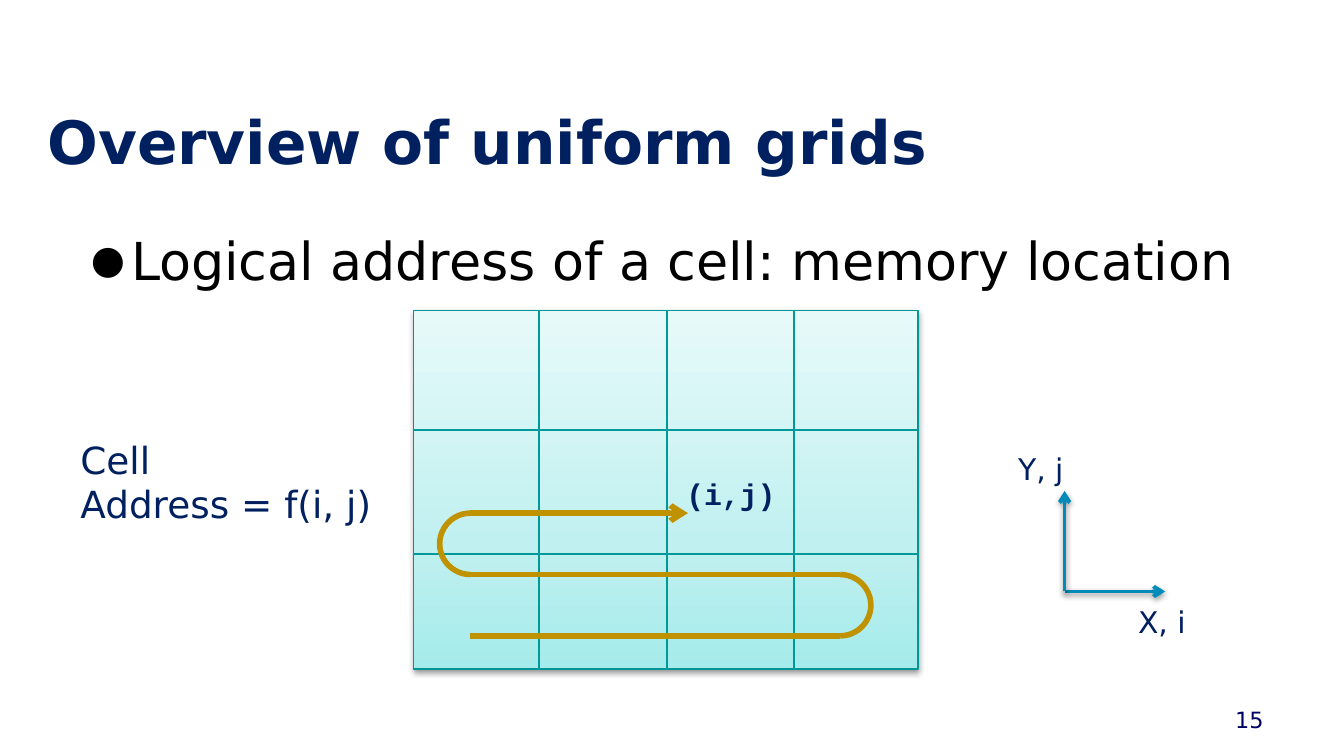
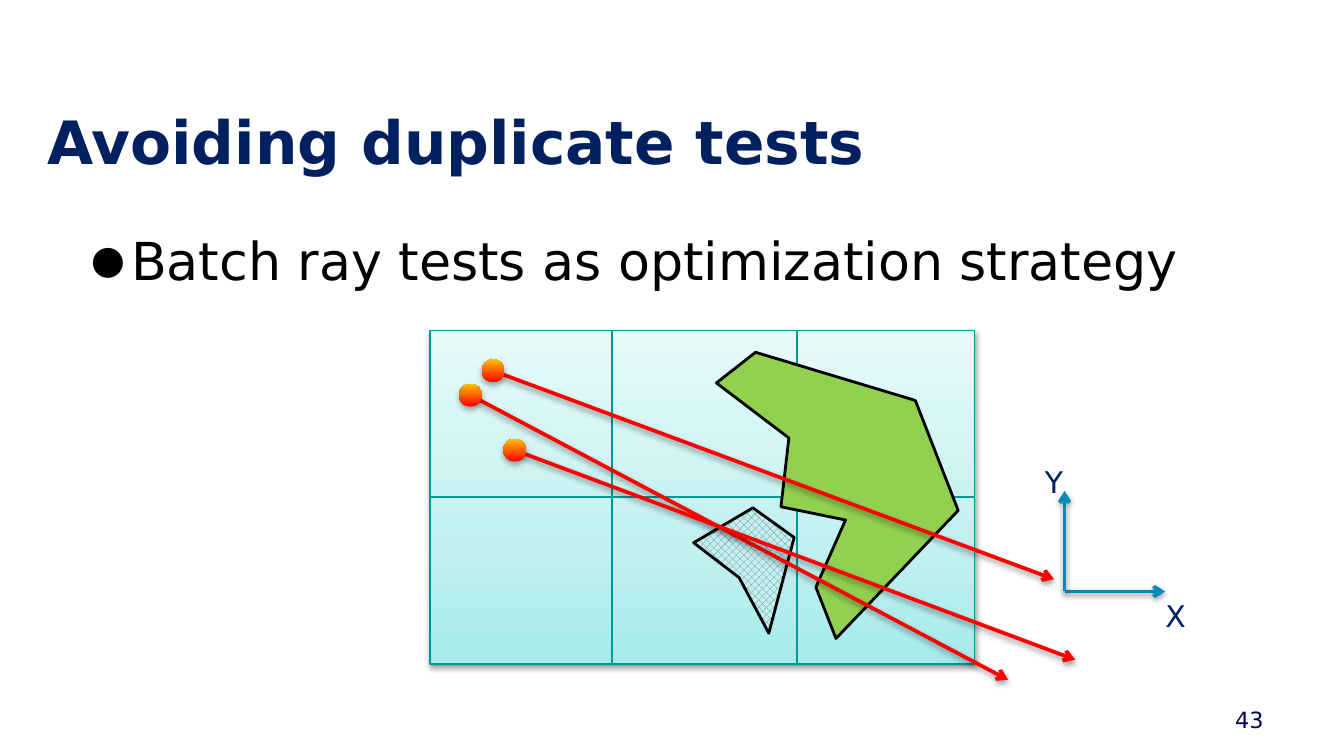
import lxml.etree
import pptx
import pptx.dml.color
import pptx.enum.dml
import pptx.enum.shapes
import pptx.enum.text
import pptx.oxml.ns
import pptx.util

Cm = pptx.util.Cm
Pt = pptx.util.Pt
RGBColor = pptx.dml.color.RGBColor
qn = pptx.oxml.ns.qn
PRESET = pptx.enum.shapes.MSO_SHAPE
ALIGN = pptx.enum.text.PP_ALIGN
ANCHOR = pptx.enum.text.MSO_ANCHOR

NAVY = RGBColor(0x00, 0x20, 0x60)
NUMBER_BLUE = RGBColor(0x00, 0x00, 0x66)
BLACK = RGBColor(0x00, 0x00, 0x00)
TEAL_BORDER = RGBColor(0x00, 0x96, 0x96)
TEAL_LINE = RGBColor(0x00, 0x99, 0x99)
AXIS_BLUE = RGBColor(0x00, 0x8A, 0xB9)
GOLD = RGBColor(0xC0, 0x92, 0x00)
GREEN = RGBColor(0x92, 0xD0, 0x50)
RED = RGBColor(0xFF, 0x00, 0x00)
ORANGE = RGBColor(0xFF, 0xC0, 0x00)
HATCH_GREY = RGBColor(0x80, 0x80, 0x80)
HATCH_AQUA = RGBColor(0xBF, 0xF1, 0xF1)
GRID_STOPS = [(0, RGBColor(0xA5, 0xEB, 0xEB)),
              (35, RGBColor(0xC1, 0xF0, 0xF0)),
              (100, RGBColor(0xE7, 0xFA, 0xFA))]
DOT_STOPS = [(0, RED), (100, ORANGE)]

FONT = "DejaVu Sans"
CODE_FONT = "Courier New"

# Positions in cm: left, top, width, height
TITLE_BOX = (0.64, 1.85, 24.13, 2.16)
BULLET_BOX = (1.47, 4.19, 22.43, 1.47)
NUMBER_BOX = (18.21, 13.23, 5.92, 0.76)
AXES_ORIGIN = (20.12, 11.18)
AXIS_LENGTH = 1.9
LABEL_HEIGHT = 0.94


# Shared formatting

def add_element(parent, tag, **attributes):
    element = lxml.etree.SubElement(parent, qn(tag))
    for name, value in attributes.items():
        element.set(name, str(value))
    return element


def set_effects(shape, shadow=None):
    """Leave the shape flat, or give it a (opacity %, distance EMU) shadow."""
    effects = add_element(shape._element.spPr, "a:effectLst")
    if shadow:
        opacity, distance = shadow
        outer = add_element(effects, "a:outerShdw", blurRad=40000, dist=distance,
                            dir=5400000, rotWithShape=0)
        color = add_element(outer, "a:srgbClr", val=BLACK)
        add_element(color, "a:alpha", val=opacity * 1000)


LINE_SHADOW = (38, 20000)
DOT_SHADOW = (35, 23000)


def set_line(shape, color, width):
    shape.line.color.rgb = color
    shape.line.width = Pt(width)


def set_gradient(shape, stops):
    """Fill from bottom to top."""
    shape.fill.gradient()
    shape.fill.gradient_angle = 90
    stop_list = shape._element.spPr.find(qn("a:gradFill")).find(qn("a:gsLst"))
    for stop in list(stop_list):
        stop_list.remove(stop)
    for position, color in stops:
        stop = add_element(stop_list, "a:gs", pos=position * 1000)
        add_element(stop, "a:srgbClr", val=color)


def format_text(text_frame, text, size, color=NAVY, font=FONT, bold=False,
                align=ALIGN.LEFT):
    text_frame.text = text
    for paragraph in text_frame.paragraphs:
        paragraph.alignment = align
        for run in paragraph.runs:
            run.font.name = font
            run.font.size = Pt(size)
            run.font.bold = bold
            run.font.color.rgb = color


def add_text(shapes, box, text, size, wrap=False, **formatting):
    text_box = shapes.add_textbox(*map(Cm, box))
    text_box.text_frame.word_wrap = wrap
    format_text(text_box.text_frame, text, size, **formatting)
    return text_box


def add_line(shapes, start, end, color, width, arrow=False, shadow=None):
    connector = shapes.add_connector(pptx.enum.shapes.MSO_CONNECTOR.STRAIGHT,
                                     *map(Cm, (*start, *end)))
    set_line(connector, color, width)
    if arrow:
        add_element(connector._element.spPr.find(qn("a:ln")), "a:tailEnd",
                    type="arrow")
    set_effects(connector, shadow)


def add_polygon(shapes, origin, points):
    left, top = origin
    corners = [(Cm(left + x), Cm(top + y)) for x, y in points]
    builder = shapes.build_freeform(*corners[0])
    builder.add_line_segments(corners[1:], close=True)
    polygon = builder.convert_to_shape()
    set_line(polygon, BLACK, 1.5)
    set_effects(polygon)
    return polygon


# Regions

def add_frame(presentation, title, bullet, number):
    """Add a slide with its title, bullet line and slide number."""
    slide = presentation.slides.add_slide(presentation.slide_layouts[5])
    heading = slide.shapes.title
    heading.left, heading.top, heading.width, heading.height = map(Cm, TITLE_BOX)
    heading.text_frame.vertical_anchor = ANCHOR.TOP
    heading.text_frame.auto_size = pptx.enum.text.MSO_AUTO_SIZE.NONE
    format_text(heading.text_frame, title, 32, bold=True)

    body = add_text(slide.shapes, BULLET_BOX, bullet, 28, wrap=True, color=BLACK)
    properties = body.text_frame.paragraphs[0]._p.get_or_add_pPr()
    properties.set("marL", str(Cm(0.76)))
    properties.set("indent", str(-Cm(0.76)))
    add_element(add_element(properties, "a:buClr"), "a:srgbClr", val=BLACK)
    add_element(properties, "a:buSzPct", val=75000)
    add_element(properties, "a:buFont", typeface=FONT)
    add_element(properties, "a:buChar", char="●")

    footer = add_text(slide.shapes, NUMBER_BOX, number, 12, wrap=True,
                      color=NUMBER_BLUE, align=ALIGN.RIGHT)
    footer.text_frame.vertical_anchor = ANCHOR.MIDDLE
    return slide


def add_grid(shapes, box, columns, rows):
    """Draw a shaded box divided at the given column and row offsets."""
    left, top, width, height = box
    panel = shapes.add_shape(PRESET.RECTANGLE, *map(Cm, box))
    set_gradient(panel, GRID_STOPS)
    set_line(panel, TEAL_BORDER, 0.75)
    set_effects(panel, LINE_SHADOW)
    for x in columns:
        add_line(shapes, (left + x, top), (left + x, top + height), TEAL_LINE, 1)
    for y in rows:
        add_line(shapes, (left, top + y), (left + width, top + y), TEAL_LINE, 1)


def add_axes(slide, origin, labels):
    """Draw two axes; each label is (text, x offset, y offset, width)."""
    shapes = slide.shapes.add_group_shape().shapes
    x, y = origin
    for end in ((x + AXIS_LENGTH, y), (x, y - AXIS_LENGTH)):
        add_line(shapes, origin, end, AXIS_BLUE, 2, arrow=True, shadow=LINE_SHADOW)
    for text, dx, dy, width in labels:
        add_text(shapes, (x + dx, y + dy, width, LABEL_HEIGHT), text, 16,
                 align=ALIGN.RIGHT)


def add_sweep(slide, box, step, reach):
    """Draw the winding cell order: three runs joined by two half circles."""
    shapes = slide.shapes.add_group_shape().shapes
    left, top, width = box
    right = left + width
    add_line(shapes, (left, top), (left + reach, top), GOLD, 3, arrow=True)
    for row in (1, 2):
        y = top + row * step
        add_line(shapes, (left, y), (right, y), GOLD, 3)
    quarter, three_quarters = 54, 162
    for center, y, angles in ((right, top + step, (three_quarters, quarter)),
                              (left, top, (quarter, three_quarters))):
        turn = shapes.add_shape(PRESET.ARC, Cm(center - step / 2), Cm(y),
                                Cm(step), Cm(step))
        turn.adjustments[0], turn.adjustments[1] = angles
        turn.fill.background()
        set_line(turn, GOLD, 3)
        set_effects(turn)


def add_obstacles(shapes, origin):
    large = add_polygon(shapes, origin, [
        (5.41, 0.99), (6.15, 0.41), (9.17, 1.32), (9.98, 3.4), (7.67, 5.82),
        (7.29, 4.85), (7.85, 3.58), (6.63, 3.33), (6.78, 2.03)])
    large.fill.solid()
    large.fill.fore_color.rgb = GREEN
    small = add_polygon(shapes, origin, [
        (4.98, 4.01), (6.1, 3.35), (6.88, 3.91), (6.4, 5.72), (5.84, 4.67)])
    small.fill.patterned()
    small.fill.pattern = pptx.enum.dml.MSO_PATTERN.OUTLINED_DIAMOND
    small.fill.fore_color.rgb = HATCH_GREY
    small.fill.back_color.rgb = HATCH_AQUA


def add_rays(shapes, origin, rays, diameter=0.43):
    left, top = origin
    for (x1, y1), (x2, y2) in rays:
        x, y = left + x1, top + y1
        add_line(shapes, (x, y), (left + x2, top + y2), RED, 2, arrow=True,
                 shadow=LINE_SHADOW)
        dot = shapes.add_shape(PRESET.OVAL, Cm(x - diameter / 2),
                               Cm(y - diameter / 2), Cm(diameter), Cm(diameter))
        set_gradient(dot, DOT_STOPS)
        dot.line.fill.background()
        set_effects(dot, DOT_SHADOW)


# Slides

def build_overview(presentation):
    slide = add_frame(presentation, "Overview of uniform grids",
                      "Logical address of a cell: memory location", "15")
    add_grid(slide.shapes, (7.82, 5.87, 9.53, 6.78),
             columns=(2.36, 4.78, 7.19), rows=(2.26, 4.6))
    add_axes(slide, AXES_ORIGIN, [("X, i", 1.07, 0.1, 1.47),
                                  ("Y, j", -1.17, -2.79, 1.4)])
    add_text(slide.shapes, (1.27, 8.13, 6.27, 1.96),
             "Cell\nAddress = f(i, j)", 20)
    add_text(slide.shapes, (12.67, 8.86, 2.24, LABEL_HEIGHT), "(i,j)", 16,
             font=CODE_FONT, bold=True, align=ALIGN.RIGHT)
    add_sweep(slide, (8.89, 9.7, 6.99), step=1.16, reach=4.11)


def build_duplicate_tests(presentation):
    slide = add_frame(presentation, "Avoiding duplicate tests",
                      "Batch ray tests as optimization strategy", "43")
    add_axes(slide, AXES_ORIGIN, [("X", 1.63, 0, 0.91),
                                  ("Y", -0.64, -2.54, 0.86)])
    grid_box = (8.13, 6.25, 10.29, 6.3)
    add_grid(slide.shapes.add_group_shape().shapes, grid_box,
             columns=(3.43, 6.93), rows=(3.15,))
    add_obstacles(slide.shapes, grid_box[:2])
    add_rays(slide.shapes, grid_box[:2], [((0.76, 1.22), (10.92, 6.6)),
                                          ((1.19, 0.76), (11.79, 4.7)),
                                          ((1.6, 2.26), (12.19, 6.22))])


def main():
    presentation = pptx.Presentation()
    presentation.slide_width = Cm(25.4)
    presentation.slide_height = Cm(14.29)
    build_overview(presentation)
    build_duplicate_tests(presentation)
    presentation.save("out.pptx")


if __name__ == "__main__":
    main()
